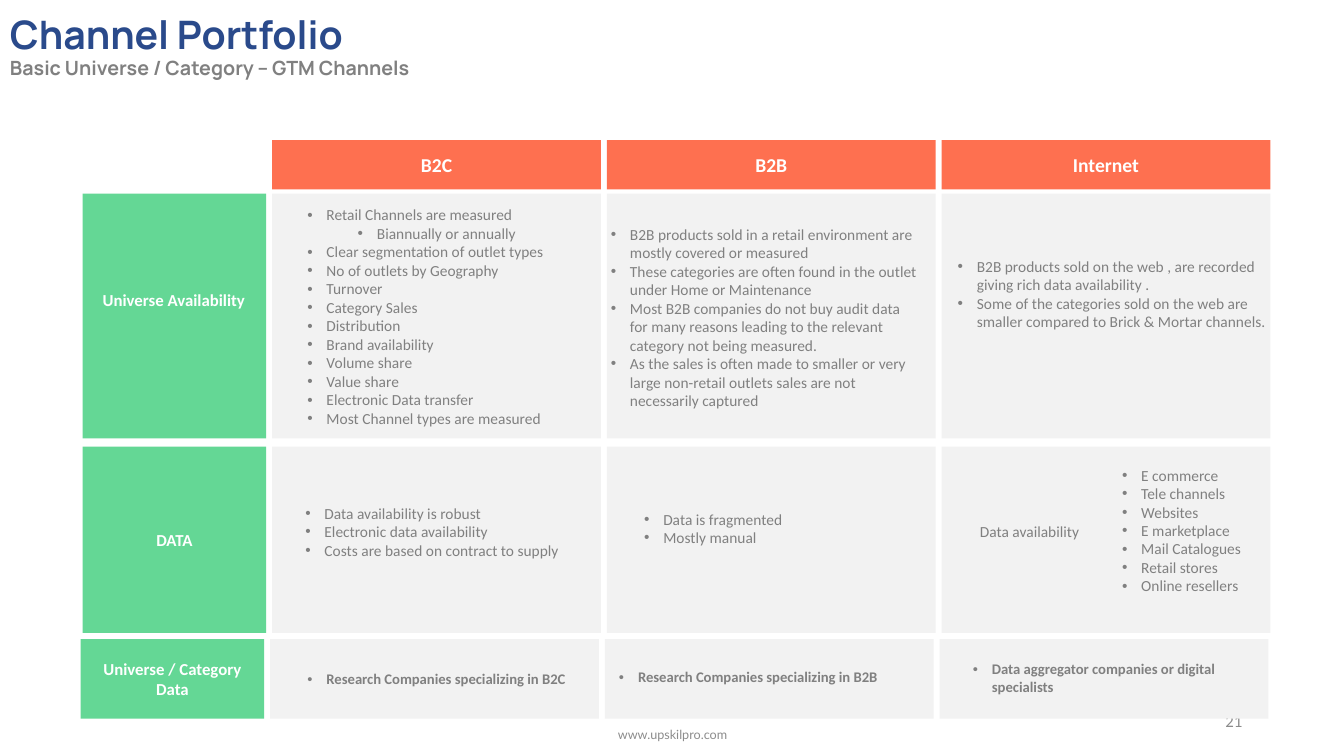
from lxml import etree
from pptx import Presentation
from pptx.dml.color import RGBColor
from pptx.enum.shapes import MSO_SHAPE
from pptx.enum.text import MSO_ANCHOR, PP_ALIGN
from pptx.oxml.ns import qn
from pptx.util import Inches, Pt

RECTANGLE = MSO_SHAPE.RECTANGLE
TOP, MIDDLE = MSO_ANCHOR.TOP, MSO_ANCHOR.MIDDLE
LEFT, CENTER, RIGHT = PP_ALIGN.LEFT, PP_ALIGN.CENTER, PP_ALIGN.RIGHT

NAVY = RGBColor(0x2A, 0x4A, 0x8B)
GRAY = RGBColor(0x80, 0x80, 0x80)
FOOTER_GRAY = RGBColor(0x8C, 0x8C, 0x8C)
PALE = RGBColor(0xF2, 0xF2, 0xF2)
GREEN = RGBColor(0x64, 0xD7, 0x95)
ORANGE = RGBColor(0xFE, 0x70, 0x50)
WHITE = RGBColor(0xFF, 0xFF, 0xFF)

# Grid of the matrix
LABEL_LEFT, LABEL_WIDTH = 0.82, 1.82
COLUMN_LEFT, COLUMN_WIDTH, COLUMN_STEP = 2.7, 3.26, 3.32
HEADER_TOP, HEADER_HEIGHT = 1.39, 0.49
CHANNELS = ["B2C", "B2B", "Internet"]
# label, top, height, horizontal shift
UPPER_ROWS = [("", 1.92, 2.43, 0), ("DATA", 4.43, 1.85, 0)]
BOTTOM_ROW = ("Universe / Category Data", 6.34, 0.79, -0.02)

# left, top, width, height, bullets as (level, text)
BULLET_LISTS = [
    (2.95, 1.99, 3.26, 2.32, [
        (0, "Retail Channels are measured"),
        (1, "Biannually or annually"),
        (0, "Clear segmentation of outlet types"),
        (0, "No of outlets by Geography"),
        (0, "Turnover"),
        (0, "Category Sales"),
        (0, "Distribution"),
        (0, "Brand availability"),
        (0, "Volume share"),
        (0, "Value share"),
        (0, "Electronic Data transfer"),
        (0, "Most Channel types are measured")]),
    (5.96, 2.18, 3.26, 1.95, [
        (0, "B2B products sold in a retail environment are mostly covered or measured"),
        (0, "These categories are often found in the outlet under Home or Maintenance"),
        (0, "Most B2B companies do not buy audit data for many reasons leading to "
            "the relevant category not being measured."),
        (0, "As the sales is often made to smaller or very large non-retail outlets "
            "sales are not necessarily captured")]),
    (9.4, 2.5, 3.26, 1.03, [
        (0, "B2B products sold on the web , are recorded giving rich data availability ."),
        (0, "Some of the categories sold on the web are smaller compared to "
            "Brick & Mortar channels.")]),
    (2.93, 4.95, 2.87, 0.66, [
        (0, "Data availability is robust"),
        (0, "Electronic data availability"),
        (0, "Costs are based on contract to supply")]),
    (6.29, 5.01, 2.87, 0.66, [
        (0, "Data is fragmented"),
        (0, "Mostly manual")]),
    (11.03, 4.57, 1.45, 1.58, [
        (0, "E commerce"),
        (0, "Tele channels"),
        (0, "Websites"),
        (0, "E marketplace"),
        (0, "Mail Catalogues"),
        (0, "Retail stores"),
        (0, "Online resellers")]),
]
RESEARCH_LISTS = [
    (2.95, 6.6, 2.87, 0.28, [(0, "Research Companies specializing in B2C")]),
    (6.04, 6.58, 2.87, 0.28, [(0, "Research Companies specializing in B2B")]),
    (9.55, 6.5, 2.87, 0.45, [(0, "Data aggregator companies or digital specialists")]),
]


def write(paragraph, text, size, color, bold=False, font="Calibri", align=LEFT):
    paragraph.text = text
    paragraph.alignment = align
    for run in paragraph.runs:
        run.font.name = font
        run.font.size = Pt(size)
        run.font.bold = bold
        run.font.color.rgb = color


def add_frame(slide, left, top, width, height, anchor=TOP):
    box = slide.shapes.add_textbox(Inches(left), Inches(top), Inches(width), Inches(height))
    frame = box.text_frame
    frame.word_wrap = True
    frame.vertical_anchor = anchor
    return frame


def add_cell(slide, left, top, width, height, fill, label="", size=12):
    cell = slide.shapes.add_shape(
        RECTANGLE, Inches(left), Inches(top), Inches(width), Inches(height))
    cell.shadow.inherit = False
    cell.fill.solid()
    cell.fill.fore_color.rgb = fill
    cell.line.fill.background()
    if label:
        cell.text_frame.word_wrap = True
        cell.text_frame.vertical_anchor = MIDDLE
        write(cell.text_frame.paragraphs[0], label, size, WHITE, True, align=CENTER)


def add_row(slide, label, top, height, shift):
    add_cell(slide, LABEL_LEFT + shift, top, LABEL_WIDTH, height, GREEN, label)
    for column in range(len(CHANNELS)):
        left = COLUMN_LEFT + column * COLUMN_STEP + shift
        add_cell(slide, left, top, COLUMN_WIDTH, height, PALE)


def add_bullets(slide, left, top, width, height, bullets, size=11, bold=False):
    frame = add_frame(slide, left, top, width, height)
    for index, (level, text) in enumerate(bullets):
        paragraph = frame.add_paragraph() if index else frame.paragraphs[0]
        paragraph.level = level
        properties = paragraph._p.get_or_add_pPr()
        properties.set("marL", str(Inches(0.19 + 0.5 * level)))
        properties.set("indent", str(Inches(-0.19)))
        etree.SubElement(properties, qn("a:buFont")).set("typeface", "Arial")
        etree.SubElement(properties, qn("a:buChar")).set("char", "•")
        write(paragraph, text, size, GRAY, bold)


def add_title(slide):
    frame = add_frame(slide, 0, 0.05, 8.61, 0.88)
    frame.margin_top = Inches(0.1)
    title, subtitle = frame.paragraphs[0], frame.add_paragraph()
    write(title, "Channel Portfolio", 28, NAVY, True, "Manrope")
    write(subtitle, "Basic Universe / Category – GTM Channels", 14, GRAY, True, "Manrope")
    title.line_spacing = subtitle.line_spacing = 0.9
    subtitle.space_before = Pt(1)


def add_text(slide, area, text, size, color, anchor=MIDDLE, **style):
    frame = add_frame(slide, *area, anchor)
    write(frame.paragraphs[0], text, size, color, **style)


def main():
    presentation = Presentation()
    presentation.slide_width = Inches(13.33)
    presentation.slide_height = Inches(7.5)
    slide = presentation.slides.add_slide(presentation.slide_layouts[6])

    add_title(slide)

    # Channel headers
    for column, channel in enumerate(CHANNELS):
        add_cell(slide, COLUMN_LEFT + column * COLUMN_STEP, HEADER_TOP,
                 COLUMN_WIDTH, HEADER_HEIGHT, ORANGE, channel, 14)

    # Availability and data rows
    for row in UPPER_ROWS:
        add_row(slide, *row)
    add_text(slide, (0.82, 2.82, 1.81, 0.3), "Universe Availability", 12, WHITE,
             bold=True, align=CENTER)
    for bullet_list in BULLET_LISTS:
        add_bullets(slide, *bullet_list)
    add_text(slide, (9.62, 5.13, 1.36, 0.29), "Data availability", 11, GRAY, TOP)

    # Page number, partly behind the bottom row
    add_text(slide, (9.42, 6.95, 3, 0.4), "21", 12, FOOTER_GRAY, align=RIGHT)

    # Research sources row
    add_row(slide, *BOTTOM_ROW)
    for research_list in RESEARCH_LISTS:
        add_bullets(slide, *research_list, size=10.5, bold=True)

    # Footer
    add_text(slide, (4.42, 7.09, 4.5, 0.4), "www.upskilpro.com", 9, FOOTER_GRAY,
             font="Lato", align=CENTER)

    presentation.save("out.pptx")


if __name__ == "__main__":
    main()
